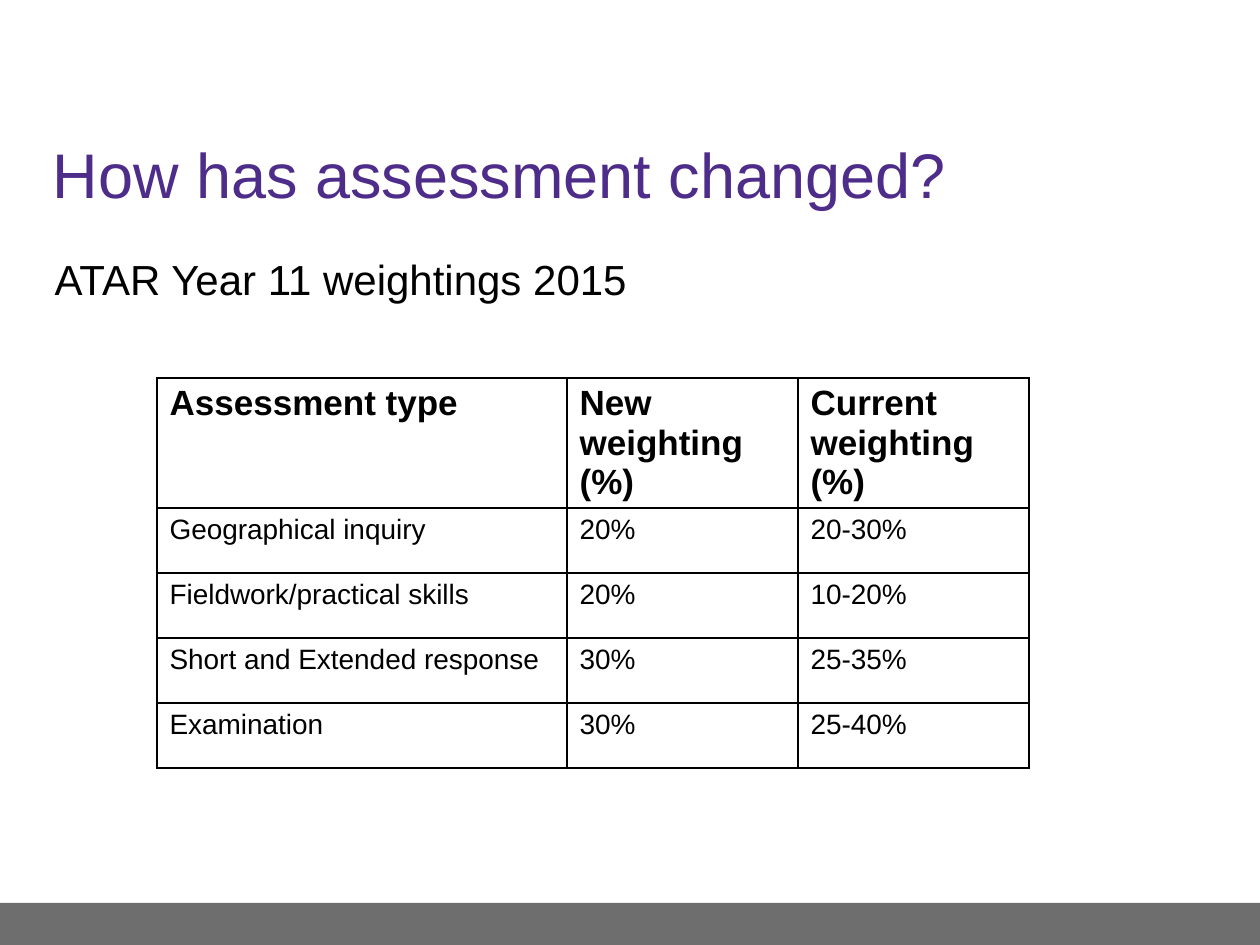
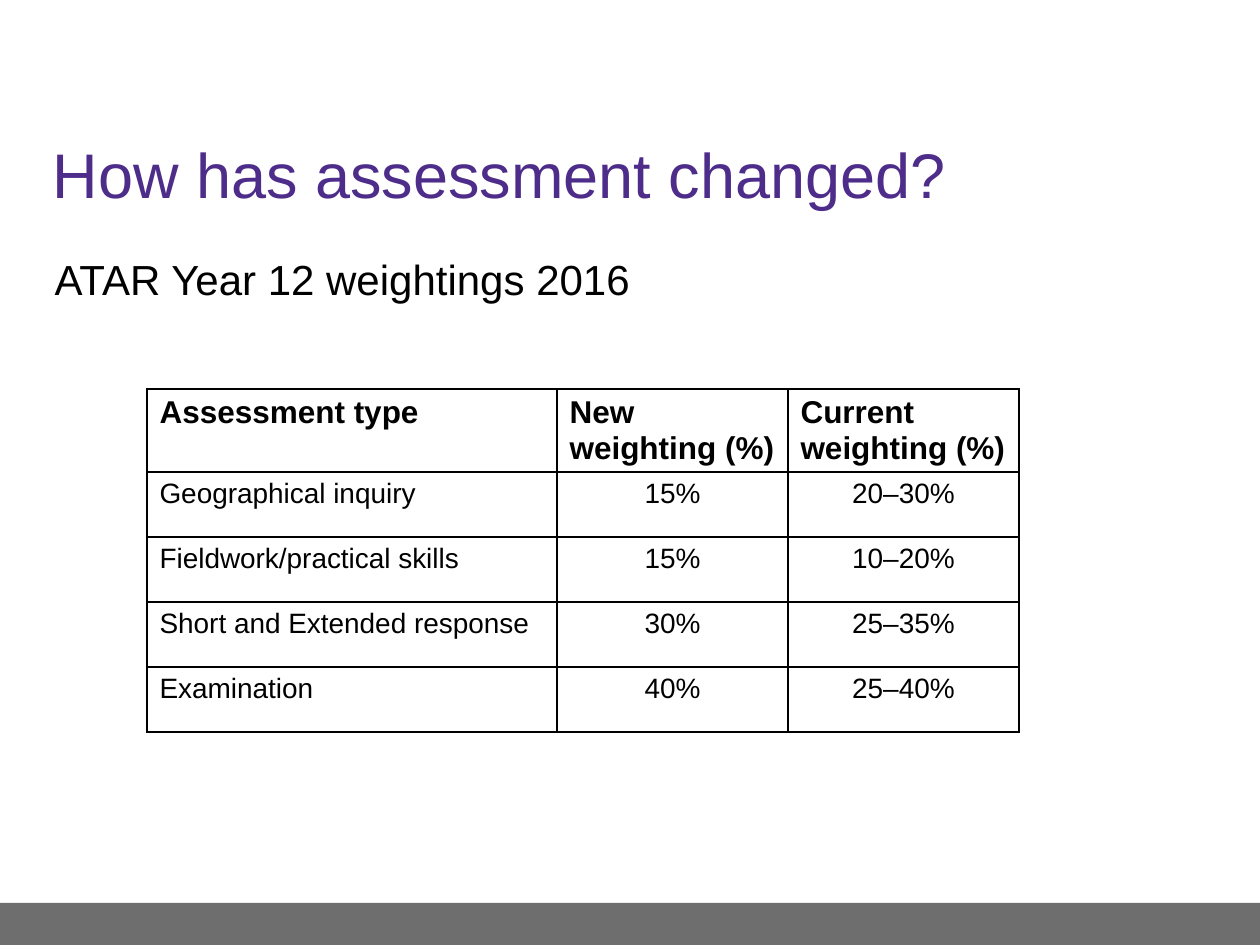
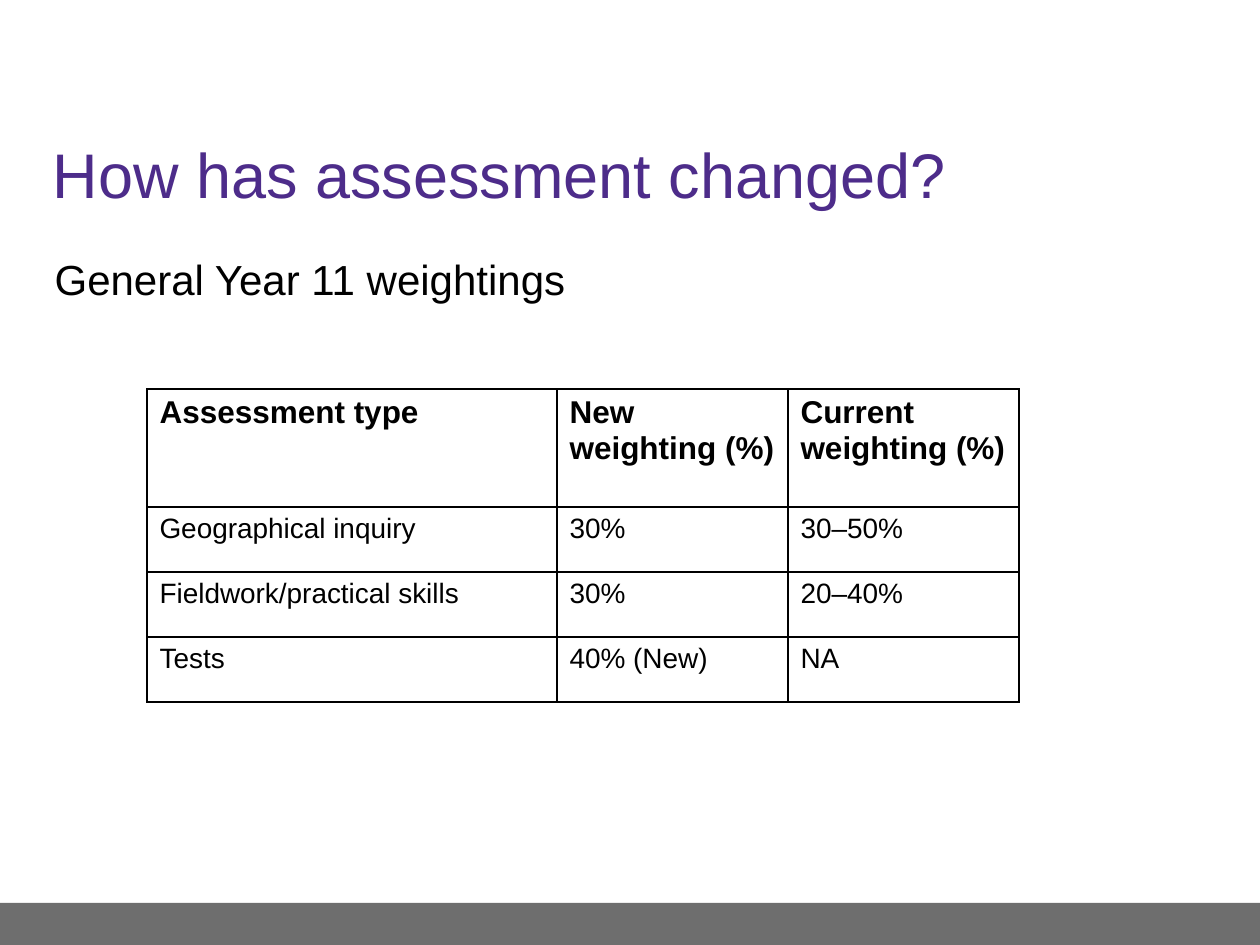
import pptx
import pptx.util
import pptx.dml.color
import pptx.enum.shapes
import pptx.enum.text
import pptx.oxml.ns
from lxml import etree

PURPLE = pptx.dml.color.RGBColor(0x4D, 0x2C, 0x8A)
BLACK = pptx.dml.color.RGBColor(0x00, 0x00, 0x00)
GREY = pptx.dml.color.RGBColor(0x6E, 0x6E, 0x6E)
FONT = "Arial"
LEFT = pptx.enum.text.PP_ALIGN.LEFT
CENTER = pptx.enum.text.PP_ALIGN.CENTER

PX_PER_INCH = 126
SLIDE_WIDTH, SLIDE_HEIGHT = 1260, 945
COLUMN_WIDTHS = (410, 231, 231)
ROW_HEIGHT = 65
TITLE = "How has assessment changed?"
HEADINGS = ("Assessment type", "New weighting (%)", "Current weighting (%)")

WEIGHTINGS = [
    dict(heading="ATAR Year 11 weightings 2015",
         layout=dict(left=157, top=378, header_height=130, header_size=20),
         rows=[("Geographical inquiry", "20%", "20-30%"),
               ("Fieldwork/practical skills", "20%", "10-20%"),
               ("Short and Extended response", "30%", "25-35%"),
               ("Examination", "30%", "25-40%")]),
    dict(heading="ATAR Year 12 weightings 2016",
         layout=dict(left=147, top=389, header_height=82, header_size=18,
                     value_align=CENTER),
         rows=[("Geographical inquiry", "15%", "20–30%"),
               ("Fieldwork/practical skills", "15%", "10–20%"),
               ("Short and Extended response", "30%", "25–35%"),
               ("Examination", "40%", "25–40%")]),
    dict(heading="General Year 11 weightings",
         layout=dict(left=147, top=389, header_height=118, header_size=18),
         rows=[("Geographical inquiry", "30%", "30–50%"),
               ("Fieldwork/practical skills", "30%", "20–40%"),
               ("Tests", "40% (New)", "NA")]),
]


def px(length):
    """Convert whole pixels to EMU."""
    return pptx.util.Emu(round(length * 914400 / PX_PER_INCH))


def add_xml(parent, tag, **attributes):
    return etree.SubElement(parent, pptx.oxml.ns.qn(tag), attributes)


def write_text(frame, text, size, color=BLACK, bold=False, align=LEFT):
    paragraph = frame.paragraphs[0]
    paragraph.alignment = align
    run = paragraph.add_run()
    run.text = text
    run.font.name = FONT
    run.font.size = pptx.util.Pt(size)
    run.font.bold = bold
    run.font.color.rgb = color
    return paragraph


def draw_borders(cell):
    """Give all four sides of a cell a 1 pt black line."""
    properties = cell._tc.get_or_add_tcPr()
    for side in ("a:lnL", "a:lnR", "a:lnT", "a:lnB"):
        line = add_xml(properties, side, w=str(pptx.util.Pt(1)))
        fill = add_xml(line, "a:solidFill")
        add_xml(fill, "a:srgbClr", val=str(BLACK))


class Deck:
    def __init__(self):
        self.presentation = pptx.Presentation()
        self.presentation.slide_width = px(SLIDE_WIDTH)
        self.presentation.slide_height = px(SLIDE_HEIGHT)
        self.slide = None

    def new_slide(self):
        layout = self.presentation.slide_layouts[1]
        self.slide = self.presentation.slides.add_slide(layout)

    def footer_band(self):
        band = self.slide.shapes.add_shape(
            pptx.enum.shapes.MSO_SHAPE.RECTANGLE,
            0, px(903), px(SLIDE_WIDTH), px(SLIDE_HEIGHT - 903))
        band.shadow.inherit = False
        band.fill.solid()
        band.fill.fore_color.rgb = GREY
        band.line.fill.background()

    def fill_placeholder(self, index, text, box, anchor, **text_format):
        holder = self.slide.placeholders[index]
        holder.left, holder.top, holder.width, holder.height = map(px, box)
        frame = holder.text_frame
        frame.word_wrap = True
        frame.auto_size = pptx.enum.text.MSO_AUTO_SIZE.NONE
        frame.vertical_anchor = anchor
        return write_text(frame, text, **text_format)

    def title(self, text):
        self.fill_placeholder(0, text, (40, 115, 1178, 116),
                              pptx.enum.text.MSO_ANCHOR.MIDDLE,
                              size=36, color=PURPLE)

    def body(self, text):
        paragraph = self.fill_placeholder(1, text, (42, 247, 1176, 635),
                                          pptx.enum.text.MSO_ANCHOR.TOP, size=24)
        paragraph.space_after = pptx.util.Pt(6)
        properties = paragraph._p.get_or_add_pPr()
        properties.set("marL", "0")
        properties.set("indent", "0")
        add_xml(properties, "a:buNone")

    def weighting_table(self, rows, left, top, header_height, header_size,
                        value_align=LEFT):
        heights = [header_height] + [ROW_HEIGHT] * len(rows)
        table = self.slide.shapes.add_table(
            len(heights), len(COLUMN_WIDTHS), px(left), px(top),
            px(sum(COLUMN_WIDTHS)), px(sum(heights))).table
        table.first_row = table.horz_banding = False
        for column, width in zip(table.columns, COLUMN_WIDTHS):
            column.width = px(width)
        for r, (height, texts) in enumerate(zip(heights, [HEADINGS] + rows)):
            table.rows[r].height = px(height)
            for c, text in enumerate(texts):
                cell = table.cell(r, c)
                draw_borders(cell)
                cell.fill.background()
                write_text(cell.text_frame, text,
                           size=16 if r else header_size, bold=r == 0,
                           align=value_align if r and c else LEFT)


def main():
    deck = Deck()
    for weighting in WEIGHTINGS:
        deck.new_slide()
        deck.footer_band()
        deck.title(TITLE)
        deck.body(weighting["heading"])
        deck.weighting_table(weighting["rows"], **weighting["layout"])
    deck.presentation.save("out.pptx")


if __name__ == "__main__":
    main()
